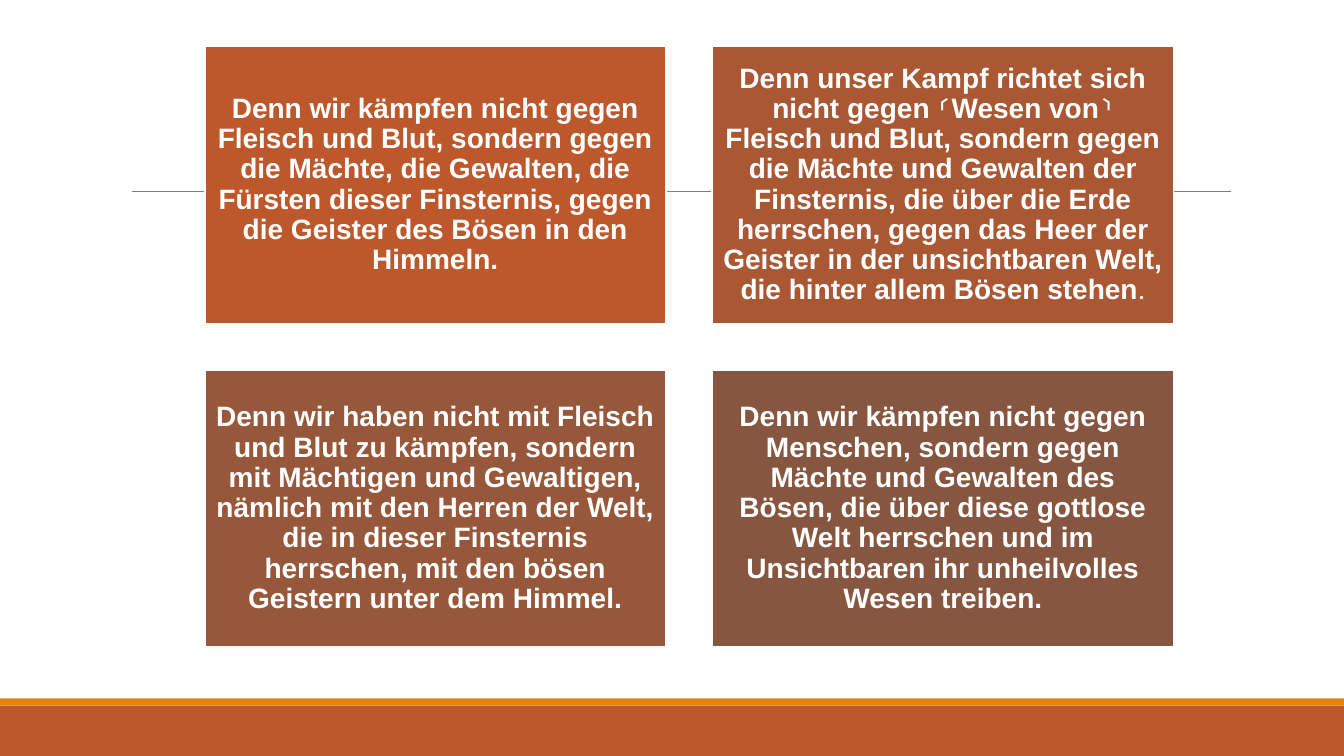
import dataclasses

import pptx
import pptx.dml.color
import pptx.enum.shapes
import pptx.enum.text
import pptx.oxml
import pptx.oxml.ns
import pptx.util

Inches = pptx.util.Inches


@dataclasses.dataclass(frozen=True)
class Theme:
    band: str = "BD582C"
    accent: str = "E48312"
    rule: str = "808080"
    white: str = "FFFFFF"
    cards: tuple = ("BD582C", "AA5834", "97573A", "865640")
    font: str = "Arial"
    tail_font: str = "Calibri"
    text_size: int = 20
    card_border: float = 1.25
    rule_width: float = 0.5


THEME = Theme()

VERSES = [
    ("Denn wir kämpfen nicht gegen Fleisch und Blut, sondern gegen die Mächte, "
     "die Gewalten, die Fürsten dieser Finsternis, gegen die Geister des Bösen "
     "in den Himmeln.", ""),
    ("Denn unser Kampf richtet sich nicht gegen ⸂Wesen von⸃ Fleisch und Blut, "
     "sondern gegen die Mächte und Gewalten der Finsternis, die über die Erde "
     "herrschen, gegen das Heer der Geister in der unsichtbaren Welt, die hinter "
     "allem Bösen stehen", "."),
    ("Denn wir haben nicht mit Fleisch und Blut zu kämpfen, sondern mit Mächtigen "
     "und Gewaltigen, nämlich mit den Herren der Welt, die in dieser Finsternis "
     "herrschen, mit den bösen Geistern unter dem Himmel.", ""),
    ("Denn wir kämpfen nicht gegen Menschen, sondern gegen Mächte und Gewalten des "
     "Bösen, die über diese gottlose Welt herrschen und im Unsichtbaren ihr "
     "unheilvolles Wesen treiben.", ""),
]


def rgb(value):
    return pptx.dml.color.RGBColor.from_string(value)


def add_rectangle(slide, left, top, width, height, fill):
    shape = slide.shapes.add_shape(
        pptx.enum.shapes.MSO_SHAPE.RECTANGLE,
        Inches(left), Inches(top), Inches(width), Inches(height))
    shape.shadow.inherit = False
    shape.fill.solid()
    shape.fill.fore_color.rgb = rgb(fill)
    shape.line.fill.background()
    return shape


def add_footer_band(slide, left, top, width, height):
    stripe = 0.07
    add_rectangle(slide, left, top + stripe, width, height - stripe, THEME.band)
    add_rectangle(slide, left, top, width, stripe, THEME.accent)


def add_title_rule(slide, left, top, width):
    connector = slide.shapes.add_connector(
        pptx.enum.shapes.MSO_CONNECTOR.STRAIGHT,
        Inches(left), Inches(top), Inches(left + width), Inches(top))
    connector.line.color.rgb = rgb(THEME.rule)
    connector.line.width = pptx.util.Pt(THEME.rule_width)
    properties = connector._element.spPr
    properties.append(pptx.oxml.parse_xml(
        "<a:effectLst %s/>" % pptx.oxml.ns.nsdecls("a")))


def format_run(run, font_name, bold):
    run.font.name = font_name
    run.font.size = pptx.util.Pt(THEME.text_size)
    run.font.bold = bold
    run.font.color.rgb = rgb(THEME.white)


def add_verse_card(slide, left, top, width, height, fill, verse, tail):
    card = add_rectangle(slide, left, top, width, height, fill)
    card.line.color.rgb = rgb(THEME.white)
    card.line.width = pptx.util.Pt(THEME.card_border)
    frame = card.text_frame
    frame.word_wrap = True
    frame.vertical_anchor = pptx.enum.text.MSO_ANCHOR.MIDDLE
    frame.margin_left = frame.margin_right = Inches(0.08)
    frame.margin_top = frame.margin_bottom = Inches(0.08)
    frame.text = verse
    paragraph = frame.paragraphs[0]
    paragraph.alignment = pptx.enum.text.PP_ALIGN.CENTER
    paragraph.line_spacing = 0.9
    format_run(paragraph.runs[0], THEME.font, True)
    if tail:
        run = paragraph.add_run()
        run.text = tail
        format_run(run, THEME.tail_font, False)


def add_verse_grid(slide, left, top, width, height):
    columns, gap = 2, 0.46
    rows = len(VERSES) // columns
    card_width = (width - gap * (columns - 1)) / columns
    card_height = (height - gap * (rows - 1)) / rows
    for index, (verse, tail) in enumerate(VERSES):
        row, column = divmod(index, columns)
        add_verse_card(
            slide,
            left + column * (card_width + gap),
            top + row * (card_height + gap),
            card_width, card_height, THEME.cards[index], verse, tail)


def main():
    presentation = pptx.Presentation()
    presentation.slide_width = Inches(13.33)
    presentation.slide_height = Inches(7.5)
    slide = presentation.slides.add_slide(presentation.slide_layouts[6])
    add_footer_band(slide, 0, 6.93, 13.33, 0.57)
    add_title_rule(slide, 1.31, 1.9, 10.9)
    add_verse_grid(slide, 2.03, 0.46, 9.61, 5.96)
    presentation.save("out.pptx")


if __name__ == "__main__":
    main()
